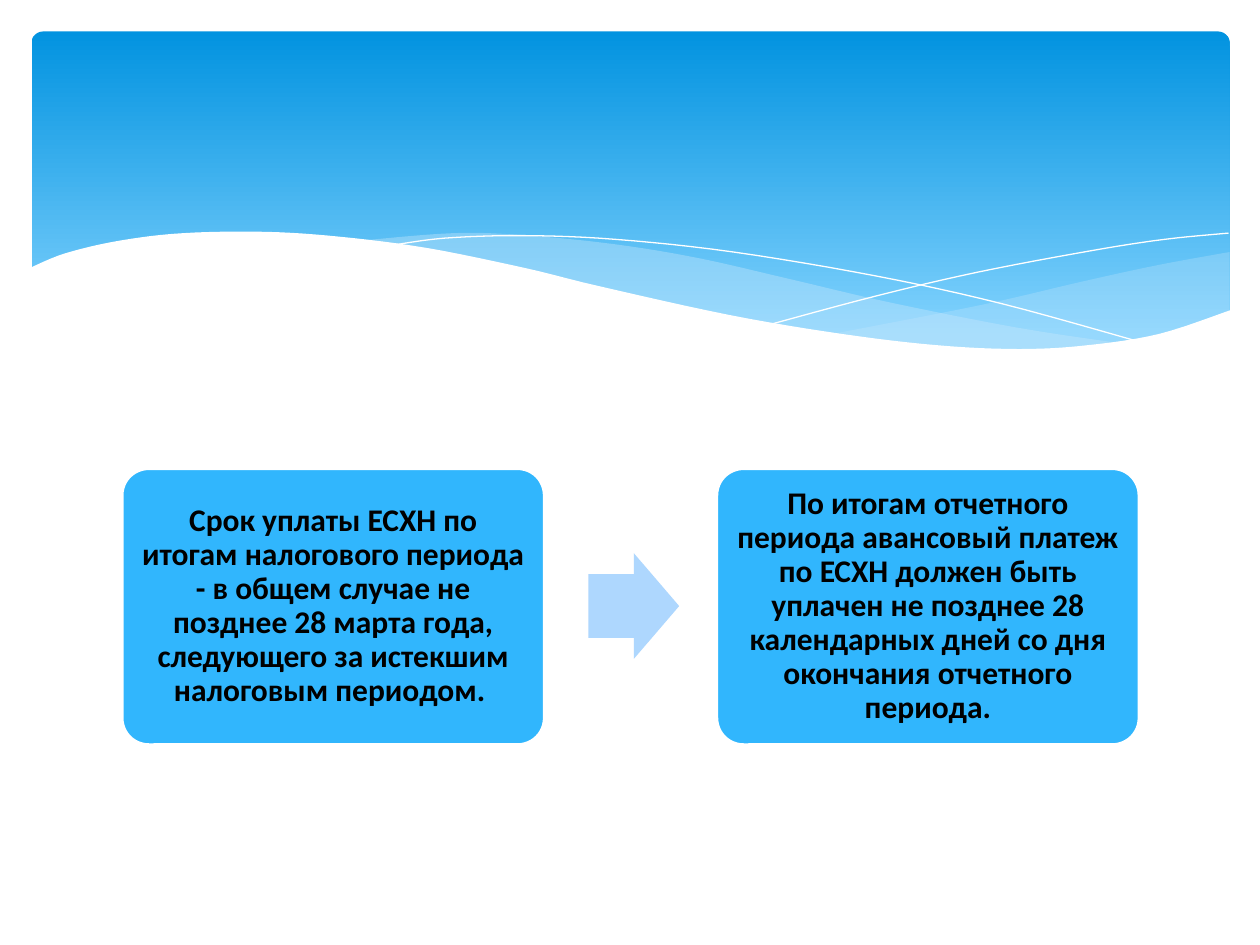
from dataclasses import dataclass
from typing import Optional

from lxml import etree
from pptx import Presentation
from pptx import util as u
from pptx.dml.color import RGBColor
from pptx.enum import shapes, text
from pptx.oxml.ns import qn

COLS, ROWS = 100, 75  # grid of square cells
STEPS = 6  # straight pieces between two curve points
COLORS = {
    "banner_top": "0293E0",
    "banner_bottom": "83D3FE",
    "veil": "C6E7FC",
    "card": "31B6FD",
    "arrow": "AED7FE",
    "white": "FFFFFF",
    "black": "000000",
}

prs = Presentation()
prs.slide_width, prs.slide_height = u.Inches(10), u.Inches(7.5)
CELL = prs.slide_width / COLS
s = prs.slides.add_slide(prs.slide_layouts[6])

Point = tuple[float, float]


@dataclass
class Wave:
    """Smooth curves joined end to end: filled and closed, or a bare hairline."""
    curves: list[list[Point]]
    fill: Optional[str] = None
    opacity: int = 100


@dataclass
class Card:
    col: float
    words: str


def cells(n: float) -> int:
    return round(n * CELL)


def rgb(name: str) -> RGBColor:
    return RGBColor.from_string(COLORS[name])


def smooth(pts: list[Point]) -> list[Point]:
    """Catmull-Rom curve through the points."""
    ext = [pts[0], *pts, pts[-1]]
    out = [pts[0]]
    for a, b, c, d in zip(ext, ext[1:], ext[2:], ext[3:]):
        for i in range(1, STEPS + 1):
            t = i / STEPS
            out.append(tuple(
                b[k] + t * (c[k] - a[k]) / 2
                + t**2 * (2 * a[k] - 5 * b[k] + 4 * c[k] - d[k]) / 2
                + t**3 * (3 * b[k] - a[k] - 3 * c[k] + d[k]) / 2
                for k in (0, 1)))
    return out


def add_preset(kind, col: float, row: float, width: float, height: float,
               adjustments: list[float]):
    sp = s.shapes.add_shape(kind, *map(cells, (col, row, width, height)))
    sp.shadow.inherit = False
    sp.line.fill.background()
    for i, value in enumerate(adjustments):
        sp.adjustments[i] = value
    return sp


def add_wave(wave: Wave) -> None:
    pts = [(cells(x), cells(y)) for curve in wave.curves for x, y in smooth(curve)]
    builder = s.shapes.build_freeform(*pts[0], scale=1.0)
    builder.add_line_segments(pts[1:], close=wave.fill is not None)
    sp = builder.convert_to_shape()
    sp.shadow.inherit = False
    if wave.fill is None:
        sp.fill.background()
        sp.line.color.rgb = rgb("white")
        sp.line.width = u.Pt(0)
        return
    sp.line.fill.background()
    sp.fill.solid()
    sp.fill.fore_color.rgb = rgb(wave.fill)
    if wave.opacity < 100:
        color = sp.element.spPr.find(qn("a:solidFill"))[0]
        etree.SubElement(color, qn("a:alpha")).set("val", str(wave.opacity * 1000))


def add_card(card: Card) -> None:
    sp = add_preset(shapes.MSO_SHAPE.ROUNDED_RECTANGLE, card.col, 37.1, 33.7, 22.1, [0.1])
    sp.fill.solid()
    sp.fill.fore_color.rgb = rgb("card")
    sp.line.color.rgb = rgb("white")
    sp.line.width = u.Pt(3)
    tf = sp.text_frame
    tf.word_wrap = True
    tf.vertical_anchor = text.MSO_ANCHOR.MIDDLE
    tf.margin_left = tf.margin_right = tf.margin_top = tf.margin_bottom = cells(0.7)
    p = tf.paragraphs[0]
    p.alignment = text.PP_ALIGN.CENTER
    p.line_spacing = 0.9
    r = p.add_run()
    r.text = card.words
    r.font.name, r.font.size, r.font.bold = "Calibri", u.Pt(18), True
    r.font.color.rgb = rgb("black")


# Banner
banner = add_preset(shapes.MSO_SHAPE.ROUNDED_RECTANGLE, 2.5, 2.5, 95.1, 27, [0.034])
banner.fill.gradient()
banner.fill.gradient_angle = 270
for stop, name, position in zip(banner.fill.gradient_stops,
                                ("banner_top", "banner_bottom"), (0, 0.9)):
    stop.color.rgb = rgb(name)
    stop.position = position

# Waves over the banner; the last one is the white lower edge
WAVES = [
    Wave([[(97.6, 20), (92.1, 21), (86.1, 22.3), (77.9, 24.2), (66.1, 26.5)],
          [(66.1, 26.5), (73.2, 27.4), (80.3, 27.8), (87.2, 27.4), (92.8, 26.3),
           (97.6, 24.7)]], "veil", 29),
    Wave([[(89.3, 27.3), (80.7, 26), (70.6, 24), (62.9, 22.2), (55.5, 20.5),
           (48.9, 19.4), (42, 18.7), (36.1, 18.5), (28.6, 19.1)],
          [(28.6, 19.1), (36.2, 20.3), (44.9, 22.2), (56.6, 24.8), (66.5, 26.6),
           (74.8, 27.6), (81.8, 27.8), (89.3, 27.3)]], "veil", 40),
    Wave([[(30.9, 19.5), (35.3, 18.9), (41.6, 18.7), (48.9, 19), (58.2, 20),
           (69.5, 21.9), (79.5, 24.1), (90.7, 27.2)]]),
    Wave([[(61.3, 25.7), (69.5, 23.5), (77.6, 21.6), (86.6, 19.9), (92.4, 19),
           (97.5, 18.5)]]),
    Wave([[(97.7, 24.6), (92, 26.5), (86.3, 27.4), (80.9, 27.7), (74.4, 27.4),
           (66.8, 26.5), (57.9, 25), (47.5, 22.7), (41.8, 21.3), (34, 19.7),
           (27.1, 18.8), (21.1, 18.4), (14.6, 18.5), (9.5, 19.1), (5.2, 20.1),
           (2.3, 21.3)],
          [(2.3, 32.9), (97.7, 32.9)]], "white"),
]
for wave in WAVES:
    add_wave(wave)

# Cards with the arrow between them
CARDS = [
    Card(9.6, "Срок уплаты ЕСХН по итогам налогового периода - в общем случае "
              "не позднее 28 марта года, следующего за истекшим налоговым периодом. "),
    Card(56.8, "По итогам отчетного периода авансовый платеж по ЕСХН должен быть "
               "уплачен не позднее 28 календарных дней со дня окончания отчетного периода."),
]
for card in CARDS:
    add_card(card)
arrow = add_preset(shapes.MSO_SHAPE.RIGHT_ARROW, 46.7, 43.9, 7.2, 8.4, [0.6, 0.5])
arrow.fill.solid()
arrow.fill.fore_color.rgb = rgb("arrow")

prs.save("out.pptx")
